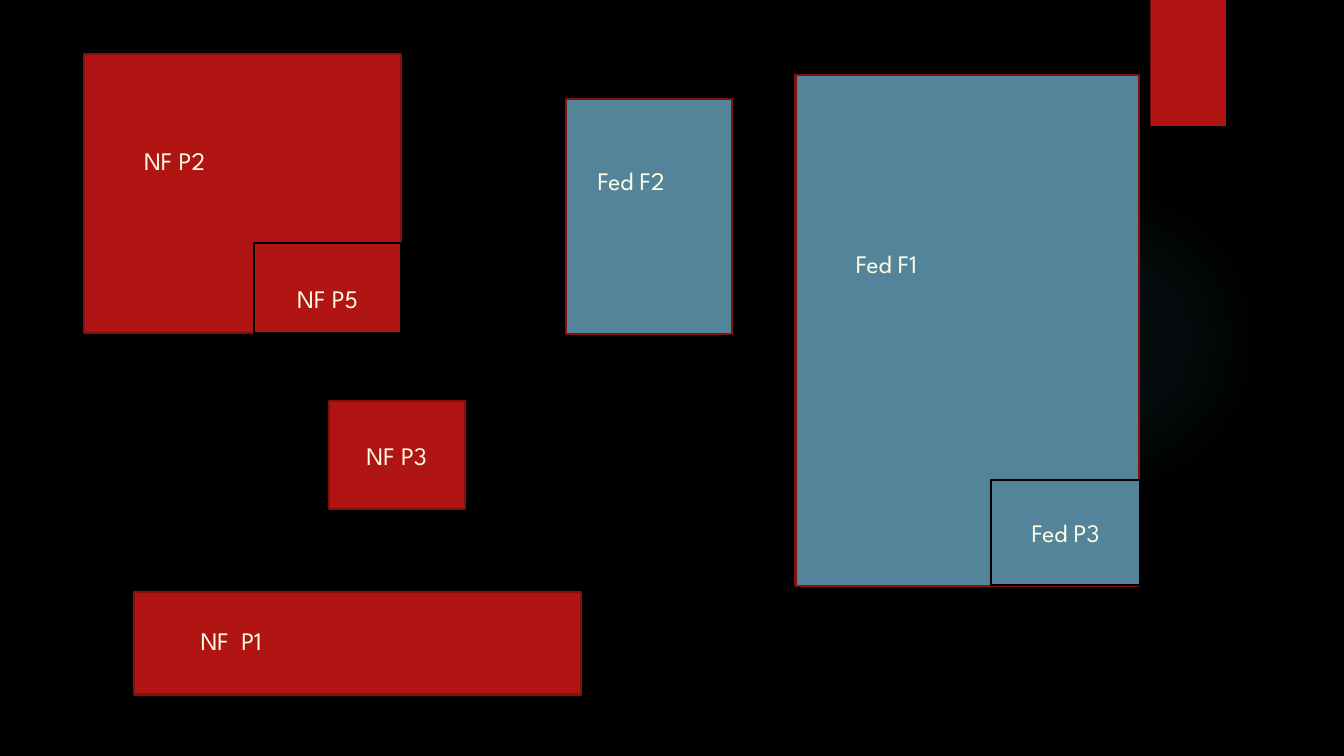
import pptx
import pptx.util
import pptx.oxml
import pptx.dml.color
import pptx.enum.shapes
import pptx.enum.text

Inches = pptx.util.Inches
RED, BLUE, DARK, BLACK, CREAM = "B01513", "54849A", "82100E", "000000", "FFFFE8"
KINDS = pptx.enum.shapes.MSO_SHAPE


def paint(color, code):
    color.rgb = pptx.dml.color.RGBColor.from_string(code)


def write(shape, text):
    shape.text_frame.word_wrap = True
    shape.text_frame.text = text
    font = shape.text_frame.paragraphs[0].runs[0].font
    font.size = pptx.util.Pt(18)
    font.name = "League Spartan"
    paint(font.color, CREAM)


deck = pptx.Presentation()
deck.slide_width, deck.slide_height = Inches(13.33), Inches(7.5)
slide = deck.slides.add_slide(deck.slide_layouts[6])
slide.background.fill.solid()
paint(slide.background.fill.fore_color, BLACK)

# Faint round glow
glow = slide.shapes.add_shape(
    KINDS.OVAL, Inches(9.41), Inches(1.83), Inches(3.08), Inches(3.08))
glow.shadow.inherit = False
glow.line.fill.background()
stops = "".join(
    f'<a:gs pos="{pos * 1000}"><a:srgbClr val="50B9C1">'
    f'<a:alpha val="{alpha * 1000}"/></a:srgbClr></a:gs>'
    for pos, alpha in [(0, 7), (36, 6), (69, 0)])
grad = pptx.oxml.parse_xml(
    '<a:gradFill xmlns:a="http://schemas.openxmlformats.org/drawingml/2006/main">'
    f'<a:gsLst>{stops}</a:gsLst><a:path path="circle">'
    '<a:fillToRect l="50000" t="50000" r="50000" b="50000"/></a:path></a:gradFill>')
glow.fill.background()
blank = glow.fill._xPr.noFill
blank.getparent().replace(blank, grad)

# Boxes: left, top, width, height, fill, line, text
boxes = [
    (11.41, 0, 0.75, 1.25, RED, None, ""),
    (0.83, 0.54, 3.15, 2.76, RED, DARK, ""),
    (3.26, 3.98, 1.35, 1.07, RED, DARK, "NF P3"),
    (1.33, 5.87, 4.43, 1.02, RED, DARK, ""),
    (7.89, 0.74, 3.41, 5.07, BLUE, DARK, ""),
    (5.61, 0.98, 1.65, 2.33, BLUE, DARK, ""),
    (2.52, 2.41, 1.46, 0.89, RED, BLACK, ""),
    (9.83, 4.76, 1.48, 1.04, BLUE, BLACK, "Fed P3"),
]
for *place, fill, line, text in boxes:
    box = slide.shapes.add_shape(KINDS.RECTANGLE, *map(Inches, place))
    box.shadow.inherit = False
    box.fill.solid()
    paint(box.fill.fore_color, fill)
    if line:
        paint(box.line.color, line)
        box.line.width = pptx.util.Pt(1.5)
    else:
        box.line.fill.background()
    if text:
        write(box, text)
        box.text_frame.vertical_anchor = pptx.enum.text.MSO_ANCHOR.MIDDLE
        box.text_frame.paragraphs[0].alignment = pptx.enum.text.PP_ALIGN.CENTER

# Labels: left, top, width, height, text
labels = [
    (1.89, 6.15, 3.09, 0.4, "NF  P1"),
    (1.33, 1.39, 2.15, 0.4, "NF P2"),
    (2.85, 2.76, 0.93, 0.4, "NF P5"),
    (8.39, 2.41, 1.65, 0.4, "Fed F1"),
    (5.83, 1.59, 1.22, 0.71, "Fed F2"),
]
for *place, text in labels:
    label = slide.shapes.add_textbox(*map(Inches, place))
    write(label, text)

deck.save("out.pptx")
